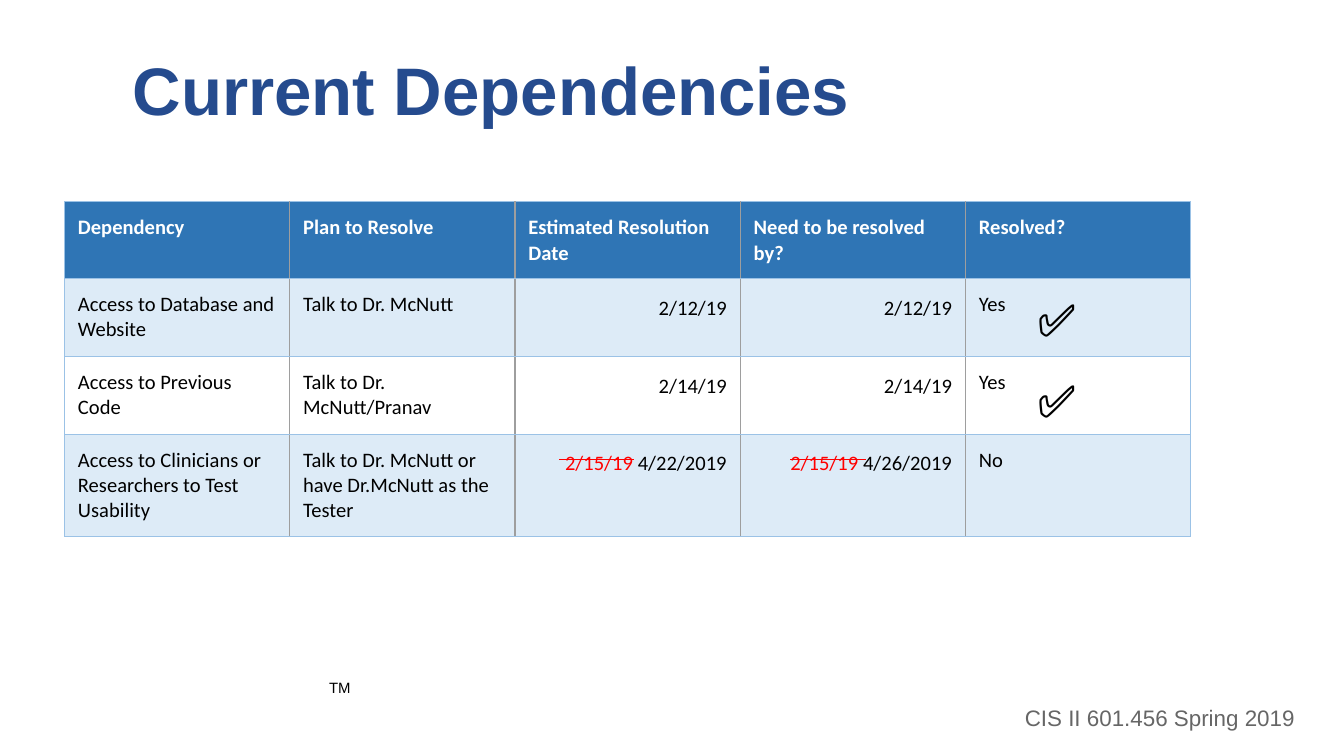
from dataclasses import dataclass
from typing import NamedTuple

from lxml import etree
from pptx import Presentation
from pptx.dml.color import RGBColor
from pptx.enum.shapes import MSO_CONNECTOR as Connector
from pptx.enum.text import PP_ALIGN as Align
from pptx.oxml.ns import qn
from pptx.util import Inches, Pt


@dataclass(frozen=True)
class Theme:
    title: str = "254B8E"
    text: str = "000000"
    footer: str = "666666"
    header_text: str = "FFFFFF"
    header_fill: str = "2F75B5"
    band_fill: str = "DDEBF7"
    outer_border: str = "9BC2E6"
    inner_border: str = "9E9E9E"
    struck: str = "FF0000"
    title_size: float = 36
    mark_size: float = 24
    footer_size: float = 12
    cell_size: float = 11
    small_size: float = 8
    font: str = "Arial"
    table_font: str = "Calibri"


THEME = Theme()


class Label(NamedTuple):
    box: tuple[float, float, float, float]
    lines: list[str]
    size: float
    color: str
    font: str = THEME.font
    bold: bool = False
    align: Align = Align.LEFT
    inset: float = 0.05
    gap: float = 0


class Row(NamedTuple):
    height: float
    cells: list[str]
    old_date: str = ""


LABELS = [
    Label((2.35, 5, 0.45, 0.3), ["TM"], THEME.small_size, THEME.text),
    Label((0.89, 0.31, 8.5, 0.94), ["Current Dependencies"], THEME.title_size,
          THEME.title, bold=True),
    Label((7.29, 5.19, 2.49, 0.25), ["CIS II 601.456 Spring 2019 "],
          THEME.footer_size, THEME.footer, align=Align.RIGHT),
]
CHECK_MARKS = Label((7.62, 2.07, 1.43, 1.96), ["✅", "✅"], THEME.mark_size,
                    THEME.text, font=THEME.table_font, inset=0.1, gap=14.5)

ROWS = [
    Row(0.57, ["Dependency", "Plan to Resolve", "Estimated Resolution Date",
               "Need to be resolved by?", "Resolved?"]),
    Row(0.58, ["Access to Database and Website", "Talk to Dr. McNutt",
               "2/12/19", "2/12/19", "Yes"]),
    Row(0.58, ["Access to Previous Code", "Talk to Dr. McNutt/Pranav",
               "2/14/19", "2/14/19", "Yes"]),
    Row(0.76, ["Access to Clinicians or Researchers to Test Usability",
               "Talk to Dr. McNutt or have Dr.McNutt as the Tester",
               " 4/22/2019", " 4/26/2019", "No"], old_date="2/15/19"),
]
TABLE_LEFT, TABLE_TOP, TABLE_WIDTH = 0.48, 1.5, 8.38
COLUMNS = len(ROWS[0].cells)
DATE_COLUMNS = (2, 3)
STRIKE_STARTS, STRIKE_Y, STRIKE_LENGTH = (4.16, 5.88), 3.42, 0.56


def add_run(p, text: str, size: float, color: str, font: str, bold: bool = False) -> None:
    r = p.add_run()
    r.text = text
    for name, value in {"size": Pt(size), "name": font, "bold": bold}.items():
        setattr(r.font, name, value)
    r.font.color.rgb = RGBColor.from_string(color)


def add_label(s, label: Label) -> None:
    tf = s.shapes.add_textbox(*map(Inches, label.box)).text_frame
    margins = {"margin_top": Inches(label.inset), "margin_bottom": Inches(label.inset)}
    for name, value in {"word_wrap": True, **margins}.items():
        setattr(tf, name, value)
    for i, line in enumerate(label.lines):
        p = tf.add_paragraph() if i else tf.paragraphs[0]
        p.alignment = label.align
        if i:
            p.space_before = Pt(label.gap)
        add_run(p, line, label.size, label.color, label.font, label.bold)


def set_borders(cell, col: int) -> None:
    outer = (THEME.outer_border, 0.5)
    inner = (THEME.inner_border, 0.75)
    borders = {
        "a:lnL": inner if col else outer,
        "a:lnR": inner if col < COLUMNS - 1 else outer,
        "a:lnT": outer,
        "a:lnB": outer,
    }
    props = cell._tc.get_or_add_tcPr()
    for i, (tag, (color, width)) in enumerate(borders.items()):
        ln = etree.Element(qn(tag), w=str(Pt(width)))
        fill = etree.SubElement(ln, qn("a:solidFill"))
        etree.SubElement(fill, qn("a:srgbClr"), val=color)
        props.insert(i, ln)


def fill_cell(cell, text: str, row: int, col: int, old_date: str) -> None:
    header = row == 0
    for side in ("left", "right", "top", "bottom"):
        setattr(cell, f"margin_{side}", Inches(0.1))
    if header or row % 2:
        cell.fill.solid()
        cell.fill.fore_color.rgb = RGBColor.from_string(
            THEME.header_fill if header else THEME.band_fill)
    else:
        cell.fill.background()
    set_borders(cell, col)

    p = cell.text_frame.paragraphs[0]
    if not header and col in DATE_COLUMNS:
        p.alignment, p.line_spacing = Align.RIGHT, 1.15
        if old_date:
            add_run(p, old_date, THEME.cell_size, THEME.struck, THEME.table_font)
    color = THEME.header_text if header else THEME.text
    add_run(p, text, THEME.cell_size, color, THEME.table_font, header)


def add_dependencies(s) -> None:
    height = sum(row.height for row in ROWS)
    table = s.shapes.add_table(
        len(ROWS), COLUMNS, Inches(TABLE_LEFT), Inches(TABLE_TOP),
        Inches(TABLE_WIDTH), Inches(height)).table
    table.first_row = table.horz_banding = False
    for i, row in enumerate(ROWS):
        table.rows[i].height = Inches(row.height)
        for j, text in enumerate(row.cells):
            fill_cell(table.cell(i, j), text, i, j, row.old_date)


def add_strike(s, x: float) -> None:
    line = s.shapes.add_connector(
        Connector.STRAIGHT, Inches(x), Inches(STRIKE_Y),
        Inches(x + STRIKE_LENGTH), Inches(STRIKE_Y))
    line.line.color.rgb = RGBColor.from_string(THEME.struck)
    line.line.width = Pt(0.75)
    etree.SubElement(line._element.spPr, qn("a:effectLst"))


def main() -> None:
    prs = Presentation()
    prs.slide_width = Inches(10)
    prs.slide_height = prs.slide_width * 9 // 16
    s = prs.slides.add_slide(prs.slide_layouts[6])

    # Title, footer and trademark sign
    for label in LABELS:
        add_label(s, label)

    # Table with check marks beside the resolved rows
    add_dependencies(s)
    add_label(s, CHECK_MARKS)

    # Lines through the outdated dates
    for x in STRIKE_STARTS:
        add_strike(s, x)

    prs.save("out.pptx")


if __name__ == "__main__":
    main()
